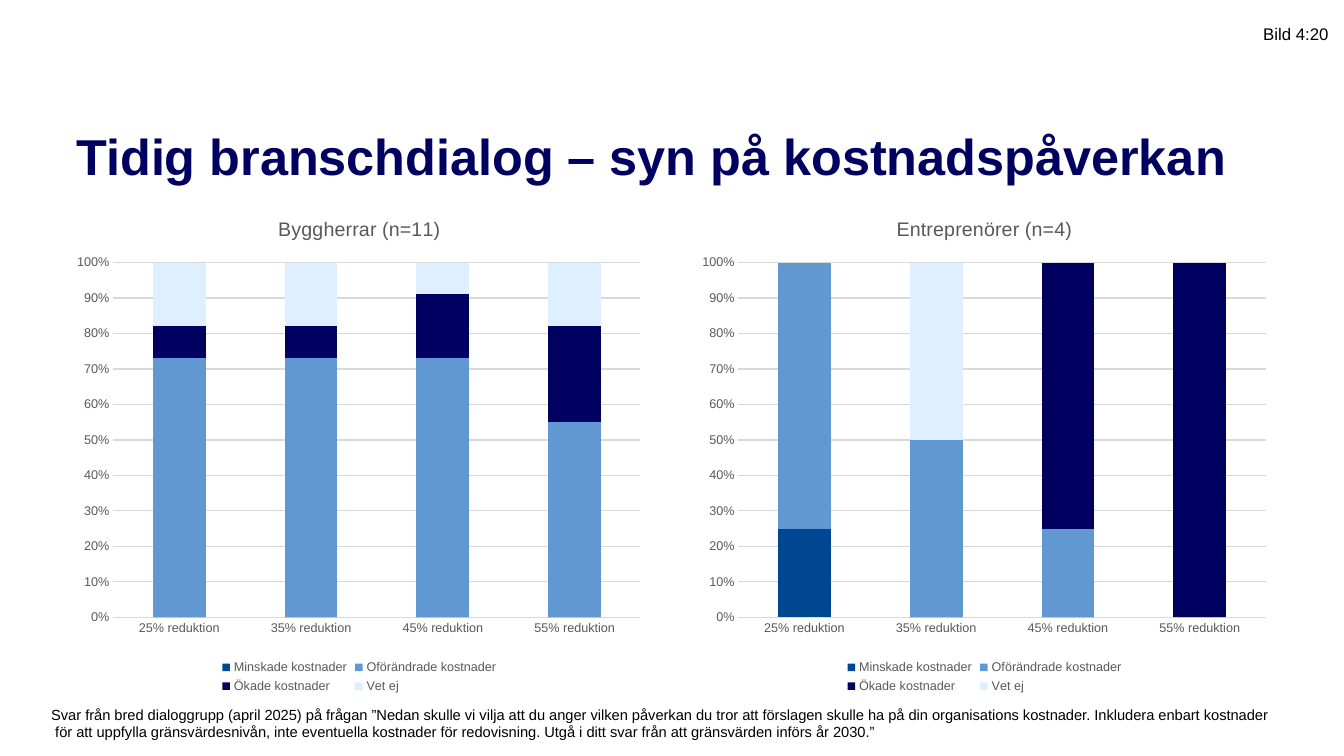
from dataclasses import dataclass

from lxml import etree
from pptx import Presentation
from pptx.chart.data import CategoryChartData
from pptx.dml.color import RGBColor
from pptx.enum.chart import XL_CHART_TYPE as ChartType
from pptx.enum.chart import XL_LEGEND_POSITION as LegendPos
from pptx.enum.chart import XL_TICK_MARK as TickMark
from pptx.enum.text import MSO_ANCHOR as Anchor
from pptx.oxml.ns import qn
from pptx.util import Inches, Pt

FONT = "Arial"
BLACK, NAVY, GREY, GRID = "000000", "000061", "595959", "D9D9D9"
CATEGORIES = [f"{pct}% reduktion" for pct in (25, 35, 45, 55)]
ANSWERS = {
    "Minskade kostnader": "004791",
    "Oförändrade kostnader": "6198D2",
    "Ökade kostnader": NAVY,
    "Vet ej": "DEF0FF",
}


@dataclass
class Label:
    text: str
    left: float
    top: float
    width: float
    height: float
    size: float
    color: str = BLACK
    bold: bool = False
    wrap: bool = False


@dataclass
class CostChart:
    title: str
    left: float
    values: list[list[int]]


LABELS = [
    Label("Tidig branschdialog – syn på kostnadspåverkan", 0.66, 1.23, 12.02, 0.62,
          36, NAVY, bold=True, wrap=True),
    Label("Svar från bred dialoggrupp (april 2025) på frågan ”Nedan skulle vi vilja att du "
          "anger vilken påverkan du tror att förslagen skulle ha på din organisations "
          "kostnader. Inkludera enbart kostnader\v för att uppfylla gränsvärdesnivån, inte "
          "eventuella kostnader för redovisning. Utgå i ditt svar från att gränsvärden "
          "införs år 2030.”", 0.41, 6.95, 12.44, 0.45, 10.5),
    Label("Bild 4:20", 12.43, 0.19, 0.87, 0.3, 12),
]

CHARTS = [
    CostChart("Byggherrar (n=11)", 0.66,
              [[0, 0, 0, 0], [73, 73, 73, 55], [9, 9, 18, 27], [18, 18, 9, 18]]),
    CostChart("Entreprenörer (n=4)", 6.86,
              [[25, 0, 0, 0], [75, 50, 25, 0], [0, 0, 75, 100], [0, 50, 0, 0]]),
]


def rgb(color: str) -> RGBColor:
    return RGBColor.from_string(color)


def set_font(font, size: float, color: str, bold: bool = False) -> None:
    font.name, font.size, font.bold = FONT, Pt(size), bold
    font.color.rgb = rgb(color)


def set_line(line, color: str) -> None:
    line.color.rgb = rgb(color)
    line.width = Pt(0.75)


def add_label(s, label: Label) -> None:
    box = s.shapes.add_textbox(Inches(label.left), Inches(label.top),
                               Inches(label.width), Inches(label.height))
    tf = box.text_frame
    tf.word_wrap = label.wrap
    tf.vertical_anchor = Anchor.MIDDLE
    p = tf.paragraphs[0]
    p.text = label.text
    set_font(p.font, label.size, label.color, label.bold)


def place(parent, before: str, **fractions: float) -> None:
    """Give a chart part a fixed place, in fractions of the chart."""
    for old in parent.findall(qn("c:layout")):
        parent.remove(old)
    layout = etree.Element(qn("c:layout"))
    manual = etree.SubElement(layout, qn("c:manualLayout"))
    if "w" in fractions:
        etree.SubElement(manual, qn("c:layoutTarget")).set("val", "inner")
    for axis in "xy":
        etree.SubElement(manual, qn(f"c:{axis}Mode")).set("val", "edge")
    for name, value in fractions.items():
        etree.SubElement(manual, qn(f"c:{name}")).set("val", str(value))
    parent.find(qn(before)).addprevious(layout)


def add_cost_chart(s, spec: CostChart) -> None:
    data = CategoryChartData()
    data.categories = CATEGORIES
    for name, values in zip(ANSWERS, spec.values):
        data.add_series(name, values)
    chart = s.shapes.add_chart(ChartType.COLUMN_STACKED_100, Inches(spec.left), Inches(1.96),
                               Inches(5.81), Inches(4.96), data).chart
    set_font(chart.font, 10, BLACK)

    chart.has_title = True
    title = chart.chart_title
    p = title.text_frame.paragraphs[0]
    p.text = spec.title
    set_font(p.font, 14, GREY)
    title.include_in_layout = False

    plot = chart.plots[0]
    plot.gap_width, plot.overlap = 150, 100
    plot.vary_by_categories = False
    for series, color in zip(plot.series, ANSWERS.values()):
        series.format.fill.solid()
        series.format.fill.fore_color.rgb = rgb(color)

    category_axis, value_axis = chart.category_axis, chart.value_axis
    for axis in (category_axis, value_axis):
        axis.major_tick_mark = axis.minor_tick_mark = TickMark.NONE
        set_font(axis.tick_labels.font, 9, GREY)
    set_line(category_axis.format.line, GRID)
    value_axis.format.line.fill.background()
    set_line(value_axis.major_gridlines.format.line, GRID)
    value_axis.minimum_scale, value_axis.maximum_scale, value_axis.major_unit = 0, 1, 0.1
    value_axis.tick_labels.number_format = "0%"
    value_axis.tick_labels.number_format_is_linked = False

    chart.has_legend = True
    chart.legend.position = LegendPos.BOTTOM
    chart.legend.include_in_layout = False
    set_font(chart.legend.font, 9, GREY)

    plot_area = chart.element.find(".//" + qn("c:plotArea"))
    place(plot_area, "c:barChart", x=0.08, y=0.13, w=0.9, h=0.71)


def main() -> None:
    prs = Presentation()
    prs.slide_width, prs.slide_height = Inches(13.33), Inches(7.5)
    s = prs.slides.add_slide(prs.slide_layouts[6])
    for label in LABELS:
        add_label(s, label)
    for spec in CHARTS:
        add_cost_chart(s, spec)
    prs.save("out.pptx")


if __name__ == "__main__":
    main()
